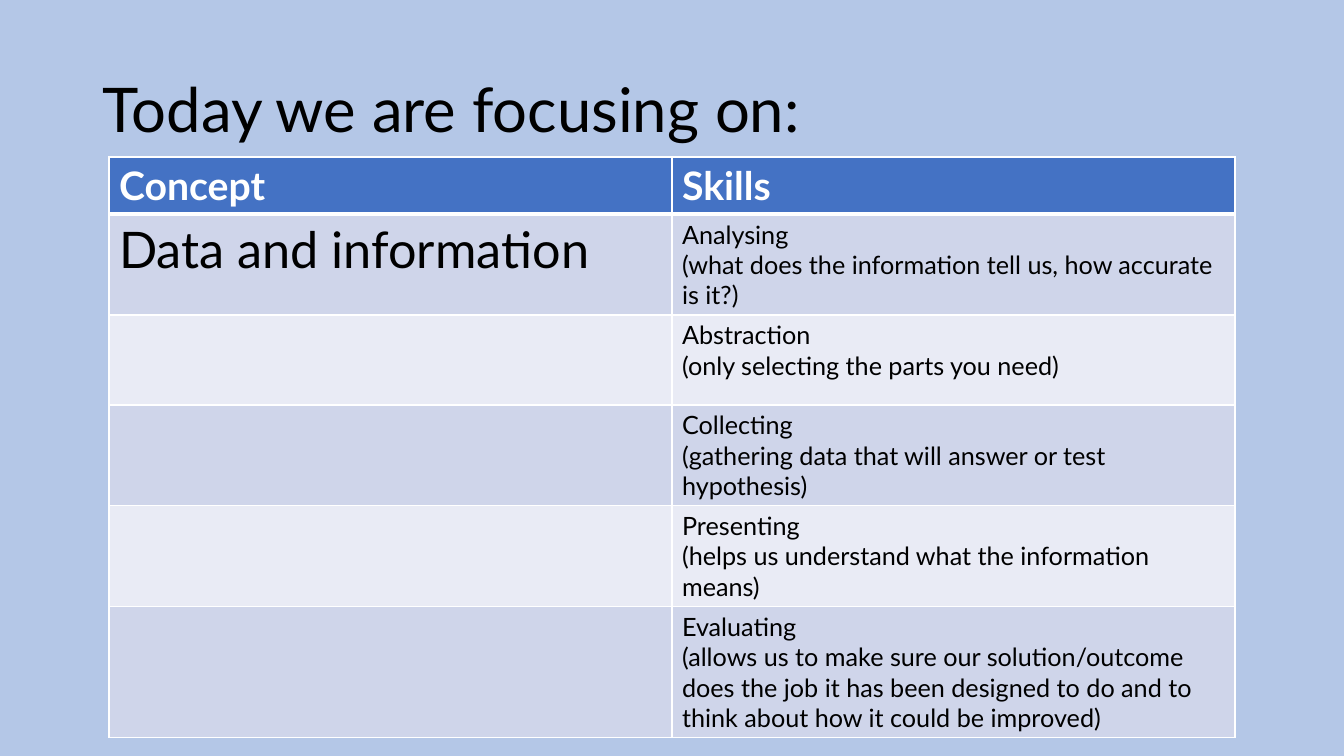
from lxml import etree
from pptx import Presentation, util as u
from pptx.dml.color import RGBColor
from pptx.enum import text
from pptx.oxml import ns

HEADING = "Today we are focusing on:"
COLUMNS = ["Concept", "Skills"]
CONCEPT = "Data and information"
SKILLS = [
    ("Analysing", "(what does the information tell us, how accurate is it?)"),
    ("Abstraction", "(only selecting the parts you need)"),
    ("Collecting", "(gathering data that will answer or test hypothesis)"),
    ("Presenting", "(helps us understand what the information means)"),
    ("Evaluating", "(allows us to make sure our solution/outcome does the job it has been "
                   "designed to do and to think about how it could be improved)"),
]

SKY = RGBColor(0xB4, 0xC7, 0xE7)
BLUE = RGBColor(0x44, 0x72, 0xC4)
BANDS = [RGBColor(0xCF, 0xD5, 0xEA), RGBColor(0xE9, 0xEB, 0xF5)]
BLACK = RGBColor(0, 0, 0)
WHITE = RGBColor(0xFF, 0xFF, 0xFF)

TITLE_FORMAT = {"name": "Lato", "size": u.Pt(44), "bold": False}
HEADER_FORMAT = {"name": "Lato", "size": u.Pt(28), "bold": True}
CONCEPT_FORMAT = {"name": "Lato", "size": u.Pt(36), "bold": False}
SKILL_FORMAT = {"name": "Lato", "size": u.Pt(18), "bold": False}

SLIDE_SIZE = (1344, 756)
TITLE_BOX = (93, 40, 1159, 146)
GRID_LEFT, GRID_TOP = 109, 157
COLUMN_WIDTH, HEADER_HEIGHT, SKILL_HEIGHT = 563, 38, 90


def px(length):
    return u.Emu(round(length * 914400 / 100.8))


def write(frame, lines, look, color):
    for index, line in enumerate(lines):
        paragraph = frame.add_paragraph() if index else frame.paragraphs[0]
        run = paragraph.add_run()
        run.text = line
        for key, value in look.items():
            setattr(run.font, key, value)
        run.font.color.rgb = color


def border(cell, widths):
    properties = cell._tc.get_or_add_tcPr()
    for index, (side, points) in enumerate(widths.items()):
        edge = etree.Element(ns.qn(f"a:ln{side}"), w=str(u.Pt(points)))
        paint = etree.SubElement(edge, ns.qn("a:solidFill"))
        etree.SubElement(paint, ns.qn("a:srgbClr"), val=str(WHITE))
        properties.insert(index, edge)


def add_title(slide):
    frame = slide.shapes.add_textbox(*map(px, TITLE_BOX)).text_frame
    frame.word_wrap = True
    frame.vertical_anchor = text.MSO_ANCHOR.MIDDLE
    write(frame, [HEADING], TITLE_FORMAT, BLACK)
    frame.paragraphs[0].line_spacing = 0.9


def add_skills_grid(slide):
    heights = [HEADER_HEIGHT] + [SKILL_HEIGHT] * len(SKILLS)
    grid = slide.shapes.add_table(
        len(heights), len(COLUMNS), px(GRID_LEFT), px(GRID_TOP),
        px(COLUMN_WIDTH * len(COLUMNS)), px(sum(heights))).table
    for column in grid.columns:
        column.width = px(COLUMN_WIDTH)
    for number, height in enumerate(heights):
        grid.rows[number].height = px(height)
        for cell in grid.rows[number].cells:
            cell.fill.solid()
            cell.fill.fore_color.rgb = BANDS[(number - 1) % 2] if number else BLUE
            border(cell, {"L": 1, "R": 1, "T": 3 if number == 1 else 1,
                          "B": 1 if number else 3})
    for number, label in enumerate(COLUMNS):
        write(grid.cell(0, number).text_frame, [label], HEADER_FORMAT, WHITE)
    write(grid.cell(1, 0).text_frame, [CONCEPT], CONCEPT_FORMAT, BLACK)
    for number, skill in enumerate(SKILLS, 1):
        write(grid.cell(number, 1).text_frame, skill, SKILL_FORMAT, BLACK)


def main():
    deck = Presentation()
    deck.slide_width, deck.slide_height = map(px, SLIDE_SIZE)
    slide = deck.slides.add_slide(deck.slide_layouts[6])
    slide.background.fill.solid()
    slide.background.fill.fore_color.rgb = SKY
    add_title(slide)
    add_skills_grid(slide)
    deck.save("out.pptx")


if __name__ == "__main__":
    main()
